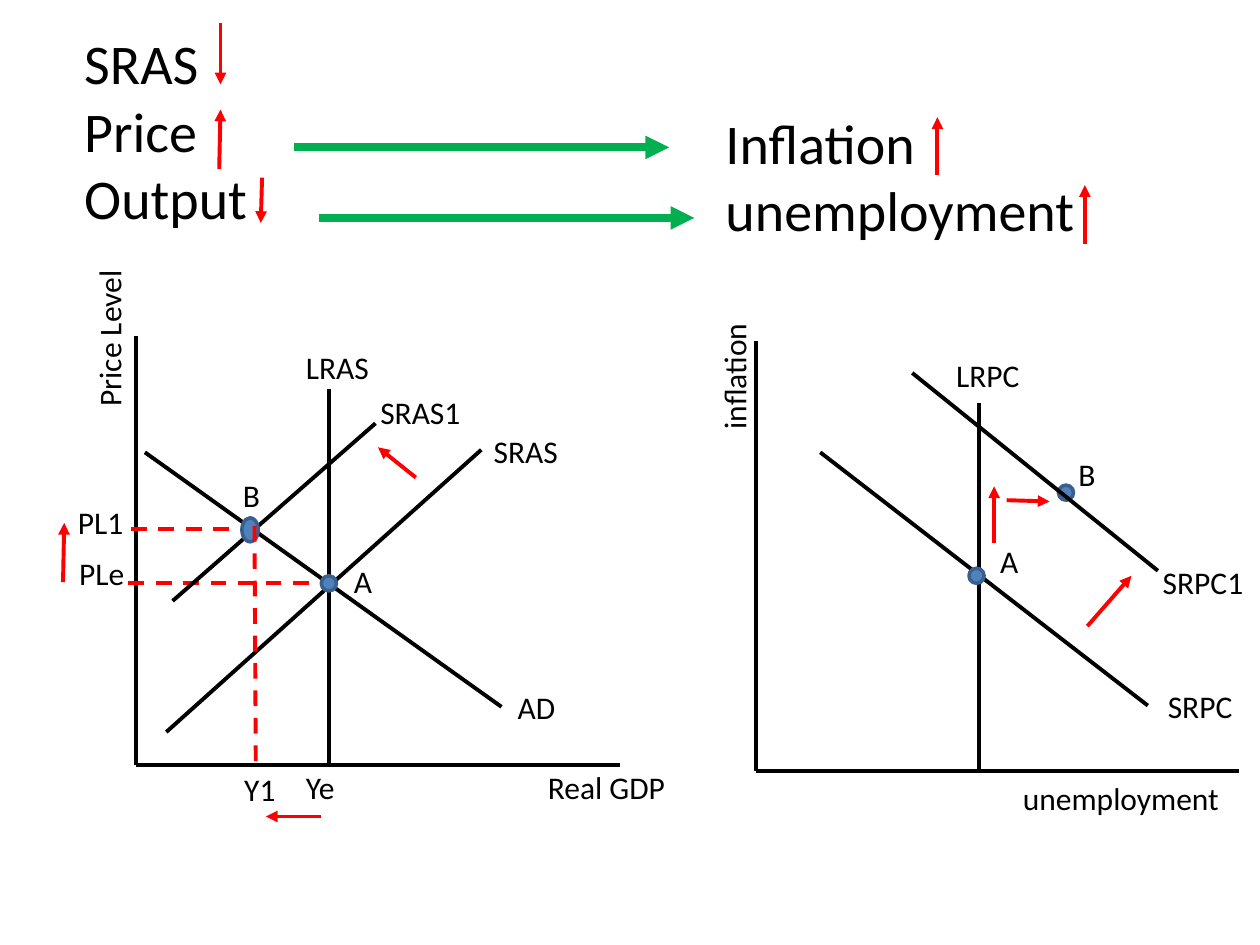
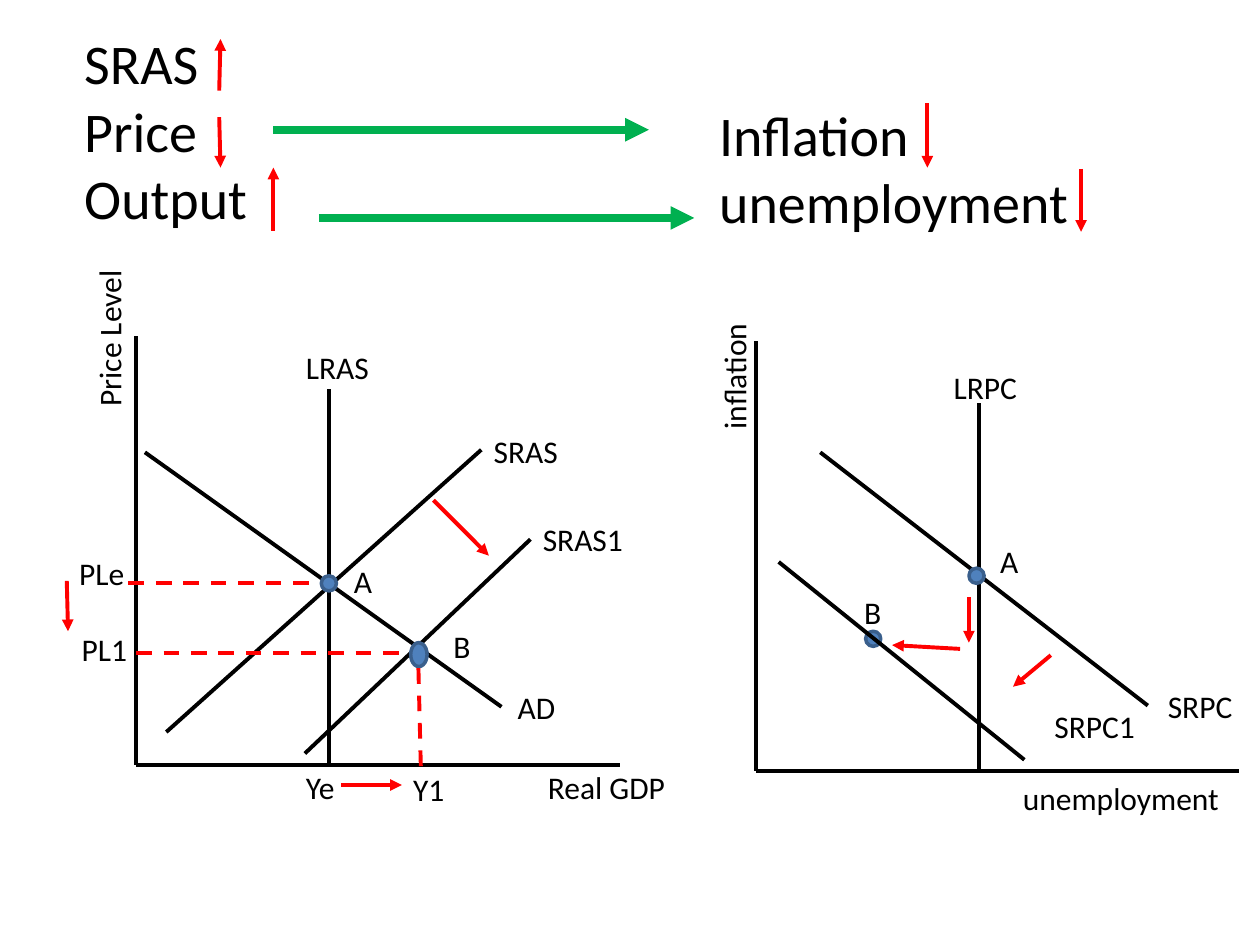
from pptx import Presentation
from pptx.dml.color import RGBColor
from pptx.enum.dml import MSO_LINE
from pptx.enum.shapes import MSO_CONNECTOR, MSO_SHAPE
from pptx.enum.text import MSO_AUTO_SIZE
from pptx.oxml.ns import qn
from pptx.util import Inches, Pt
from lxml.etree import SubElement

COLUMNS, ROWS = 10, 7.5
WIDTH, HEIGHT = Inches(10), Inches(7.5)
BLACK, RED, GREEN = "000000", "FF0000", "00B050"
DOT_FILL, DOT_EDGE = "4F81BD", "3A5F8C"
FONT = "Calibri"
THIN, THICK = 2.25, 4.5
SMALL_DOT, TALL_DOT = (0.12, 0.12), (0.13, 0.19)
LETTER_WIDTH = 0.34


def color(hex_text):
    return RGBColor.from_string(hex_text)


def across(columns):
    return round(WIDTH * columns / COLUMNS)


def down(rows):
    return round(HEIGHT * rows / ROWS)


def add_line(page, start, end, stroke=BLACK, weight=THIN, dashed=False, arrow=False):
    line = page.shapes.add_connector(
        MSO_CONNECTOR.STRAIGHT,
        across(start[0]), down(start[1]), across(end[0]), down(end[1]))
    line.line.color.rgb = color(stroke)
    line.line.width = Pt(weight)
    if dashed:
        line.line.dash_style = MSO_LINE.DASH
    if arrow:
        SubElement(line.line._get_or_add_ln(), qn("a:tailEnd"), type="triangle")
    SubElement(line._element.spPr, qn("a:effectLst"))


def add_arrow(page, start, end, stroke=RED, weight=THIN):
    add_line(page, start, end, stroke, weight, arrow=True)


def add_guide(page, start, end):
    """Dashed line from a point of equilibrium to an axis."""
    add_line(page, start, end, RED, dashed=True)


def add_text(page, text, left, top, width=1.33, height=0.4, size=18, rotation=0):
    box = page.shapes.add_textbox(across(left), down(top), across(width), down(height))
    box.rotation = rotation
    frame = box.text_frame
    frame.word_wrap = True
    frame.auto_size = MSO_AUTO_SIZE.SHAPE_TO_FIT_TEXT
    for index, words in enumerate(text.split("\n")):
        para = frame.paragraphs[0] if index == 0 else frame.add_paragraph()
        span = para.add_run()
        span.text = words
        span.font.name = FONT
        span.font.size = Pt(size)
        span.font.color.rgb = color(BLACK)


def add_heading(page, text, left, top):
    add_text(page, text, left, top, width=5.06,
             height=0.1 + 0.54 * len(text.split("\n")), size=32)


def add_dot(page, left, top, size=SMALL_DOT):
    dot = page.shapes.add_shape(
        MSO_SHAPE.OVAL, across(left), down(top), across(size[0]), down(size[1]))
    dot.shadow.inherit = False
    dot.fill.solid()
    dot.fill.fore_color.rgb = color(DOT_FILL)
    dot.line.color.rgb = color(DOT_EDGE)
    dot.line.width = Pt(2)


def add_axes(page, origin, top, right, x_name, x_at, x_width, y_name, y_at):
    add_line(page, (origin[0], top), origin)
    add_line(page, (right, origin[1]), origin)
    add_text(page, x_name, *x_at, width=x_width)
    add_text(page, y_name, *y_at, rotation=270)


def add_supply_graph(page):
    """Aggregate demand and supply before the shift."""
    add_axes(page, (1.08, 6.07), 2.67, 4.92,
             "Real GDP", (4.25, 6.05), 1.33, "Price Level", (0.2, 2.46))
    add_line(page, (2.61, 3.09), (2.61, 6.06))
    add_line(page, (1.15, 3.59), (3.98, 5.61))
    add_line(page, (1.32, 5.81), (3.82, 3.57))
    add_guide(page, (1.02, 4.63), (2.61, 4.63))
    for name, left, top in (("LRAS", 2.33, 2.71), ("Ye", 2.33, 6.05),
                            ("PLe", 0.53, 4.35), ("AD", 4.01, 5.41),
                            ("SRAS", 3.82, 3.38)):
        add_text(page, name, left, top)
    add_dot(page, 2.55, 4.57)
    add_text(page, "A", 2.71, 4.41, LETTER_WIDTH)


def add_phillips_graph(page, long_run_label):
    """Phillips curves before the shift."""
    add_axes(page, (6, 6.12), 2.71, 9.83,
             "unemployment", (8.02, 6.13), 2.03, "inflation", (5.16, 2.64))
    add_line(page, (6.51, 3.59), (9.11, 5.6))
    add_line(page, (7.77, 3.2), (7.77, 6.1))
    add_text(page, "SRPC", 9.17, 5.4)
    add_text(page, "LRPC", *long_run_label)
    add_dot(page, 7.69, 4.51)
    add_text(page, "A", 7.84, 4.25, LETTER_WIDTH)


def add_scenario(deck, scenario):
    page = deck.slides.add_slide(deck.slide_layouts[6])
    add_supply_graph(page)
    add_phillips_graph(page, scenario["long_run_label"])
    add_dot(page, *scenario["phillips_dot"])
    for curve in scenario["shifted_curves"]:
        add_line(page, *curve)
    add_dot(page, *scenario["supply_dot"], size=TALL_DOT)
    for guide in scenario["guides"]:
        add_guide(page, *guide)
    for label in scenario["labels"]:
        add_text(page, *label)
    add_heading(page, "SRAS\nPrice\nOutput", 0.57, 0.18)
    add_heading(page, "Inflation\nunemployment", *scenario["result_at"])
    for left, row in (scenario["price_link"], (2.53, 1.73)):
        add_arrow(page, (left, row), (left + 2.98, row), GREEN, THICK)
    for arrow in scenario["arrows"]:
        add_arrow(page, *arrow)


SUPPLY_FALLS = {
    "long_run_label": (7.49, 2.78),
    "result_at": (5.66, 0.81),
    "price_link": (2.33, 1.17),
    "shifted_curves": [((1.37, 4.77), (2.98, 3.36)), ((7.24, 2.96), (9.19, 4.53))],
    "supply_dot": (1.92, 4.11),
    "phillips_dot": (8.4, 3.85),
    "guides": [((1.04, 4.2), (1.92, 4.2)), ((2.03, 6.04), (2.02, 4.17))],
    "labels": [("SRAS1", 2.92, 3.07), ("PL1", 0.52, 3.94, 0.8), ("Y1", 1.84, 6.06),
               ("B", 1.83, 3.73, LETTER_WIDTH), ("B", 8.46, 3.56, LETTER_WIDTH),
               ("SRPC1", 9.13, 4.42)],
    "arrows": [
        ((1.75, 0.18), (1.75, 0.67)), ((1.74, 1.34), (1.75, 0.87)),
        ((2.08, 1.41), (2.07, 1.77)), ((7.44, 1.39), (7.44, 0.93)),
        ((8.61, 1.94), (8.61, 1.47)), ((3.3, 3.79), (3, 3.55)),
        ((0.5, 4.62), (0.51, 4.15)), ((2.55, 6.48), (2.11, 6.48)),
        ((7.89, 4.31), (7.89, 3.86)), ((7.99, 3.97), (8.33, 3.98)),
        ((8.63, 4.97), (8.98, 4.57)),
    ],
}

SUPPLY_RISES = {
    "long_run_label": (7.47, 2.87),
    "result_at": (5.61, 0.75),
    "price_link": (2.17, 1.03),
    "shifted_curves": [((2.42, 5.98), (4.21, 4.28)), ((6.18, 4.46), (8.13, 6.03))],
    "supply_dot": (3.26, 5.1),
    "phillips_dot": (6.87, 5.01),
    "guides": [((1.08, 5.18), (3.23, 5.18)), ((3.34, 6.08), (3.32, 5.26))],
    "labels": [("SRAS1", 4.21, 4.08), ("PL1", 0.55, 4.95, 0.8), ("Y1", 3.18, 6.06),
               ("B", 3.5, 4.93, LETTER_WIDTH), ("B", 6.76, 4.66, 0.51),
               ("SRPC1", 8.27, 5.56)],
    "arrows": [
        ((1.74, 0.72), (1.75, 0.31)), ((1.74, 0.93), (1.75, 1.33)),
        ((2.17, 1.83), (2.17, 1.33)), ((7.36, 0.82), (7.36, 1.33)),
        ((8.58, 1.34), (8.58, 1.84)), ((3.44, 3.97), (3.88, 4.41)),
        ((0.53, 4.61), (0.54, 5.01)), ((2.71, 6.23), (3.19, 6.23)),
        ((7.69, 4.74), (7.69, 5.1)), ((7.62, 5.15), (7.08, 5.12)),
        ((8.34, 5.2), (8.04, 5.45)),
    ],
}


def main():
    deck = Presentation()
    deck.slide_width, deck.slide_height = WIDTH, HEIGHT
    for scenario in (SUPPLY_FALLS, SUPPLY_RISES):
        add_scenario(deck, scenario)
    deck.save("out.pptx")


if __name__ == "__main__":
    main()
